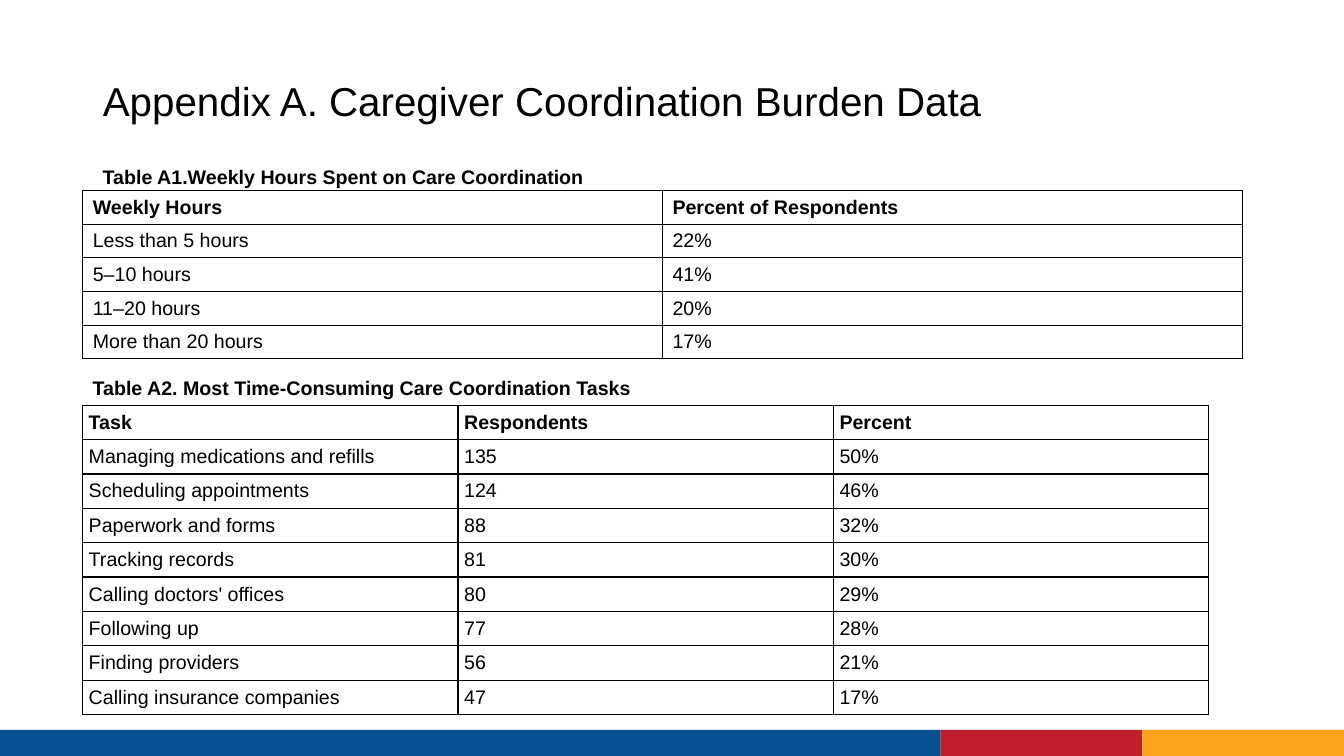
from lxml import etree
from pptx import Presentation
from pptx.dml.color import RGBColor as Rgb
from pptx.enum.shapes import MSO_SHAPE as Shape
from pptx.enum.text import MSO_ANCHOR as Anchor, MSO_AUTO_SIZE as Auto, PP_ALIGN as Align
from pptx.oxml.ns import qn
from pptx.util import Inches, Pt

HUES = {"ink": "000000", "paper": "FFFFFF", "blue": "075190", "gold": "F9A21A", "red": "BE1E2D"}

HOURS = [
    ("Weekly Hours", "Percent of Respondents"),
    ("Less than 5 hours", "22%"),
    ("5–10 hours", "41%"),
    ("11–20 hours", "20%"),
    ("More than 20 hours", "17%"),
]
TASKS = [
    ("Task", "Respondents", "Percent"),
    ("Managing medications and refills", "135", "50%"),
    ("Scheduling appointments", "124", "46%"),
    ("Paperwork and forms", "88", "32%"),
    ("Tracking records", "81", "30%"),
    ("Calling doctors' offices", "80", "29%"),
    ("Following up", "77", "28%"),
    ("Finding providers", "56", "21%"),
    ("Calling insurance companies", "47", "17%"),
]


def hue(name):
    """Return the named colour."""
    return Rgb.from_string(HUES[name])


def style(frame, size, bold=False):
    """Format every run of a text frame."""
    for para in frame.paragraphs:
        para.alignment = Align.LEFT
        for run in para.runs:
            font = run.font
            font.name, font.size, font.bold = "Arial", Pt(size), bold
            font.color.rgb = hue("ink")


def add_band(slide, left, top, width, height):
    """Draw the coloured footer band, split into blue, red and gold."""
    tip = 2
    long = width - 2 * tip
    parts = [("blue", 0, long), ("red", long, tip), ("gold", long + tip, tip)]
    for name, shift, span in parts:
        bar = slide.shapes.add_shape(
            Shape.RECTANGLE, Inches(left + shift), Inches(top), Inches(span), Inches(height))
        bar.shadow.inherit = False
        bar.fill.solid()
        bar.fill.fore_color.rgb = hue(name)
        bar.line.fill.background()


def add_title(slide, text, left, top, width, height):
    """Place and format the title placeholder."""
    title = slide.shapes.title
    title.left, title.top = Inches(left), Inches(top)
    title.width, title.height = Inches(width), Inches(height)
    frame = title.text_frame
    frame.text = text
    frame.auto_size = Auto.NONE
    frame.word_wrap = True
    frame.vertical_anchor = Anchor.BOTTOM
    frame.paragraphs[0].line_spacing = 0.9
    style(frame, 28.8)


def add_label(slide, text, left, top, width, height):
    """Add a bold table caption."""
    box = slide.shapes.add_textbox(Inches(left), Inches(top), Inches(width), Inches(height))
    frame = box.text_frame
    frame.word_wrap = True
    frame.auto_size = Auto.SHAPE_TO_FIT_TEXT
    frame.text = text
    style(frame, 14, True)


def add_edges(cell):
    """Give a cell thin borders on all four sides."""
    props = cell._tc.get_or_add_tcPr()
    for spot, side in enumerate(("lnL", "lnR", "lnT", "lnB")):
        line = etree.Element(qn(f"a:{side}"), w=str(Pt(1)))
        fill = etree.SubElement(line, qn("a:solidFill"))
        etree.SubElement(fill, qn("a:srgbClr"), val=HUES["ink"])
        props.insert(spot, line)


def add_grid(slide, data, left, top, width, height, pad):
    """Add a ruled table with even rows and columns and a bold first row."""
    rows, cols = len(data), len(data[0])
    table = slide.shapes.add_table(
        rows, cols, Inches(left), Inches(top), Inches(width), Inches(height)).table
    table.first_row = table.horz_banding = False
    for col in table.columns:
        col.width = Inches(width / cols)
    for r, row in enumerate(data):
        table.rows[r].height = Inches(height / rows)
        for c, text in enumerate(row):
            cell = table.cell(r, c)
            cell.text = text
            cell.vertical_anchor = Anchor.MIDDLE
            cell.margin_left = cell.margin_right = Inches(pad)
            cell.margin_top = cell.margin_bottom = Inches(pad / 2)
            cell.fill.background()
            add_edges(cell)
            style(cell.text_frame, 14, r == 0)


def main():
    """Build and save the slide."""
    deck = Presentation()
    deck.slide_width, deck.slide_height = Inches(13.33), Inches(7.5)
    slide = deck.slides.add_slide(deck.slide_layouts[5])
    slide.background.fill.solid()
    slide.background.fill.fore_color.rgb = hue("paper")
    add_band(slide, 0, 7.24, 13.33, 0.27)
    add_title(slide, "Appendix A. Caregiver Coordination Burden Data", 0.92, 0.68, 9.02, 0.61)
    add_label(slide, "Table A1.Weekly Hours Spent on Care Coordination", 0.92, 1.59, 5.84, 0.34)
    add_grid(slide, HOURS, 0.82, 1.89, 11.5, 1.67, 0.1)
    add_label(slide, "Table A2. Most Time-Consuming Care Coordination Tasks", 0.82, 3.68, 5.84, 0.34)
    add_grid(slide, TASKS, 0.82, 4.02, 11.17, 3.07, 0.06)
    deck.save("out.pptx")


if __name__ == "__main__":
    main()
